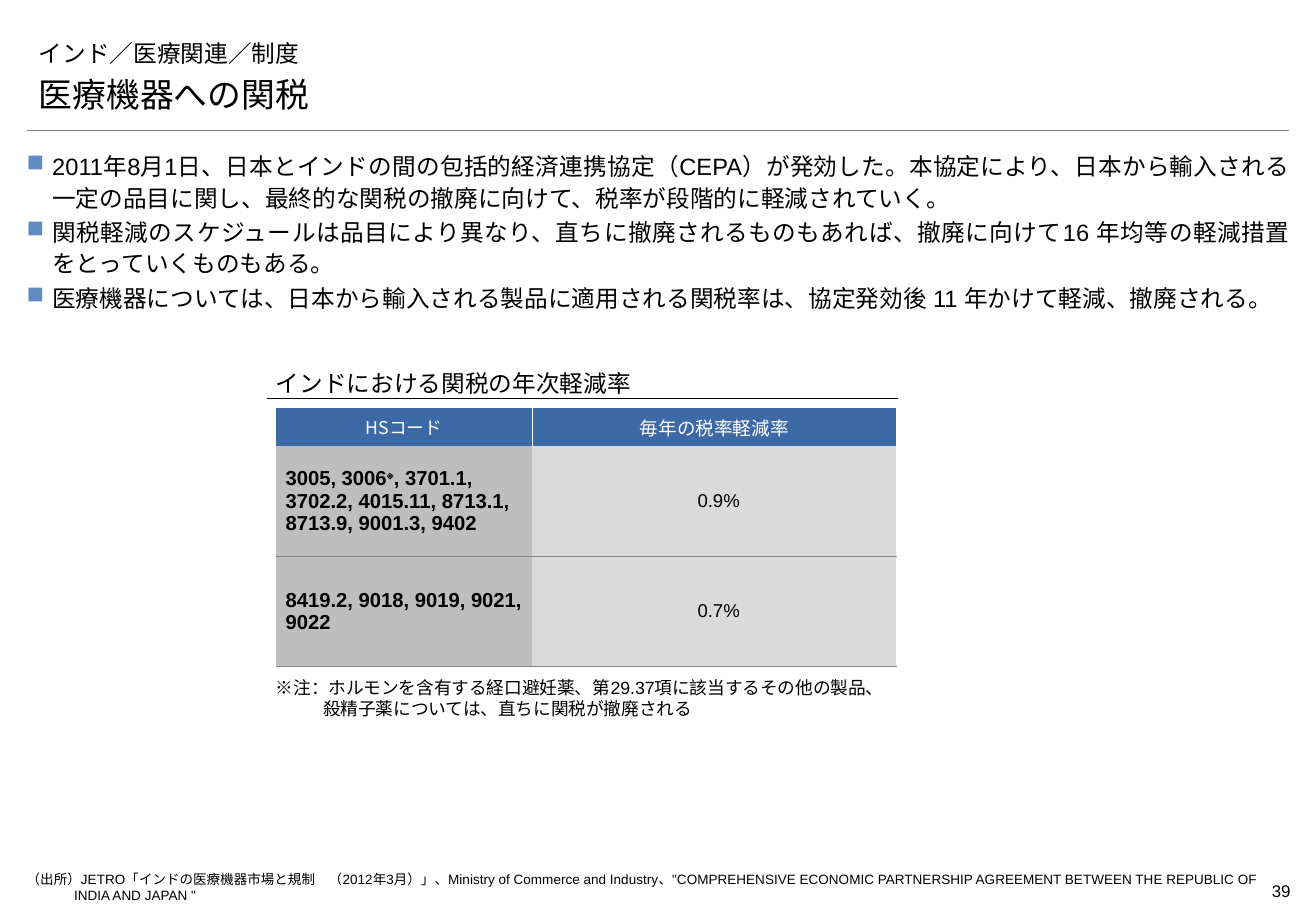
from lxml import etree
from pptx import Presentation
from pptx import util as u
from pptx.dml.color import RGBColor
from pptx.enum import shapes, text
from pptx.oxml.ns import qn

PX = 9144  # 100 px to the inch
THEME = {
    "ink": "000000", "rule": "7F7F7F", "bullet": "5F8AC3", "white": "FFFFFF",
    "header": "3D6AA7", "code": "BEBEBE", "rate": "DADADA", "border": "868686",
    "heading": "Montserrat", "body": "Arial", "cjk": "Noto Sans CJK JP",
    "title": 20, "lead": 14, "cell": 12, "label": 11, "note": 10.5,
    "page": 10, "source": 8,
}
LEFT, CENTER = text.PP_ALIGN.LEFT, text.PP_ALIGN.CENTER
RIGHT, JUSTIFY = text.PP_ALIGN.RIGHT, text.PP_ALIGN.JUSTIFY
SIDES = ("margin_left", "margin_top", "margin_right", "margin_bottom")


def write(frame, paragraphs, size, font="body", color="ink", bold=False,
          align=LEFT, indent=(0, 0), bullet=None, spacing=None):
    """Fill a text frame; a paragraph is a list of (text, baseline) runs."""
    for i, runs in enumerate(paragraphs):
        para = frame.paragraphs[0] if i == 0 else frame.add_paragraph()
        props = para._p.get_or_add_pPr()
        for key, px in zip(("marL", "indent"), indent):
            props.set(key, str(px * PX))
        if bullet:
            mark_color = etree.SubElement(props, qn("a:buClr"))
            etree.SubElement(mark_color, qn("a:srgbClr"), val=THEME["bullet"])
            etree.SubElement(props, qn("a:buChar"), char=bullet)
        para.alignment = align
        for key, value in (spacing or {}).items():
            setattr(para, key, value)
        for words, baseline in runs:
            run = para.add_run()
            run.text = words
            look = {"size": u.Pt(THEME[size]), "bold": bold, "name": THEME[font]}
            for key, value in look.items():
                setattr(run.font, key, value)
            run.font.color.rgb = RGBColor.from_string(THEME[color])
            run_props = run._r.get_or_add_rPr()
            etree.SubElement(run_props, qn("a:ea"), typeface=THEME["cjk"])
            if baseline:
                run_props.set("baseline", str(baseline))


def add_text(box, paragraphs, size, margins=(0, 0, 0, 0),
             anchor=text.MSO_ANCHOR.TOP, **look):
    frame = slide.shapes.add_textbox(*(v * PX for v in box)).text_frame
    frame.word_wrap = True
    frame.vertical_anchor = anchor
    for side, px in zip(SIDES, margins):
        setattr(frame, side, px * PX)
    write(frame, [[(words, 0)] for words in paragraphs], size, **look)


deck = Presentation()
deck.slide_width, deck.slide_height = 1083 * PX, 750 * PX
slide = deck.slides.add_slide(deck.slide_layouts[6])

# Rules under the title and under the table heading
for x1, x2, y, color, weight in ((22, 1061, 107, "rule", 0.25),
                                 (220, 739, 328, "ink", 0.75)):
    rule = slide.shapes.add_connector(shapes.MSO_CONNECTOR.STRAIGHT,
                                      x1 * PX, y * PX, x2 * PX, y * PX)
    rule.line.color.rgb = RGBColor.from_string(THEME[color])
    rule.line.width = u.Pt(weight)
    etree.SubElement(rule._element.spPr, qn("a:effectLst"))

# Section, title and table heading
for box, words, size, margins in (
        ((22, 21, 1039, 39), "インド／医療関連／制度", "lead", (10, 5, 10, 5)),
        ((22, 60, 1039, 39), "医療機器への関税", "title", (10, 5, 10, 5)),
        ((227, 296, 496, 39), "インドにおける関税の年次軽減率", "lead", (0, 5, 0, 8))):
    add_text(box, [words], size, margins, text.MSO_ANCHOR.BOTTOM, font="heading")

# Key points
add_text((22, 123, 1039, 135), [
    "2011年8月1日、日本とインドの間の包括的経済連携協定（CEPA）が発効した。本協定により、日本から輸入される一定の品目に関し、最終的な関税の撤廃に向けて、税率が段階的に軽減されていく。",
    "関税軽減のスケジュールは品目により異なり、直ちに撤廃されるものもあれば、撤廃に向けて16 年均等の軽減措置をとっていくものもある。",
    "医療機器については、日本から輸入される製品に適用される関税率は、協定発効後 11 年かけて軽減、撤廃される。",
], "lead", align=JUSTIFY, indent=(21, -21), bullet="■",
    spacing={"line_spacing": 1.1, "space_after": u.Pt(2)})

# Tariff table
tariffs = slide.shapes.add_table(3, 2, 227 * PX, 336 * PX, 511 * PX, 213 * PX).table
for column, width in zip(tariffs.columns, (211, 300)):
    column.width = width * PX
for row, height in zip(tariffs.rows, (31, 91, 91)):
    row.height = height * PX

header = {"size": "label", "color": "white", "align": CENTER}
codes = {"size": "cell", "bold": True}
rate = {"size": "label", "align": CENTER, "indent": (7, 0)}
rows = [
    [([("HSコード", 0)], header | {"size": "note", "font": "cjk"}),
     ([("毎年の税率軽減率", 0)], header)],
    [([("3005, 3006", 0), ("※", 30000),
       (", 3701.1, 3702.2, 4015.11, 8713.1, 8713.9, 9001.3, 9402", 0)], codes),
     ([("0.9%", 0)], rate)],
    [([("8419.2, 9018, 9019, 9021, 9022", 0)], codes), ([("0.7%", 0)], rate)],
]
for r, row in enumerate(rows):
    for c, (runs, look) in enumerate(row):
        cell = tariffs.cell(r, c)
        cell.vertical_anchor = text.MSO_ANCHOR.MIDDLE
        margins = (0, 0, 0, 0) if look is rate else (8, 4, 8, 4)
        for side, px in zip(SIDES, margins):
            setattr(cell, side, px * PX)
        write(cell.text_frame, [runs], **look)

        # Borders come before the fill in the cell properties
        edges = {"lnL": None, "lnR": None, "lnT": None, "lnB": None}
        if r == 0:
            edges["lnR"] = "white"
            edges["lnL"] = "white" if c else None
        else:
            edges["lnT"] = "border" if r > 1 else None
            edges["lnB"] = "border"
            edges["lnR"] = "white" if c else None
        cell_props = cell._tc.get_or_add_tcPr()
        for edge, color in edges.items():
            line = etree.SubElement(cell_props, qn("a:" + edge), w=str(u.Pt(0.5)))
            if color:
                paint = etree.SubElement(line, qn("a:solidFill"))
                etree.SubElement(paint, qn("a:srgbClr"), val=THEME[color])
            else:
                etree.SubElement(line, qn("a:noFill"))
        cell.fill.solid()
        fill = "header" if r == 0 else ("code", "rate")[c]
        cell.fill.fore_color.rgb = RGBColor.from_string(THEME[fill])

# Table note, source and page number
add_text((227, 557, 512, 23), [
    "※注：ホルモンを含有する経口避妊薬、第29.37項に該当するその他の製品、殺精子薬については、直ちに関税が撤廃される",
], "note", indent=(39, -39))
add_text((22, 717, 1024, 36), [
    "（出所）JETRO「インドの医療機器市場と規制　（2012年3月）」、Ministry of Commerce and Industry、"
    "\"COMPREHENSIVE ECONOMIC PARTNERSHIP AGREEMENT BETWEEN THE REPUBLIC OF INDIA AND JAPAN \"",
], "source", indent=(39, -39))
add_text((983, 720, 79, 27), ["39"], "page", (0, 5, 0, 5), align=RIGHT)

deck.save("out.pptx")
